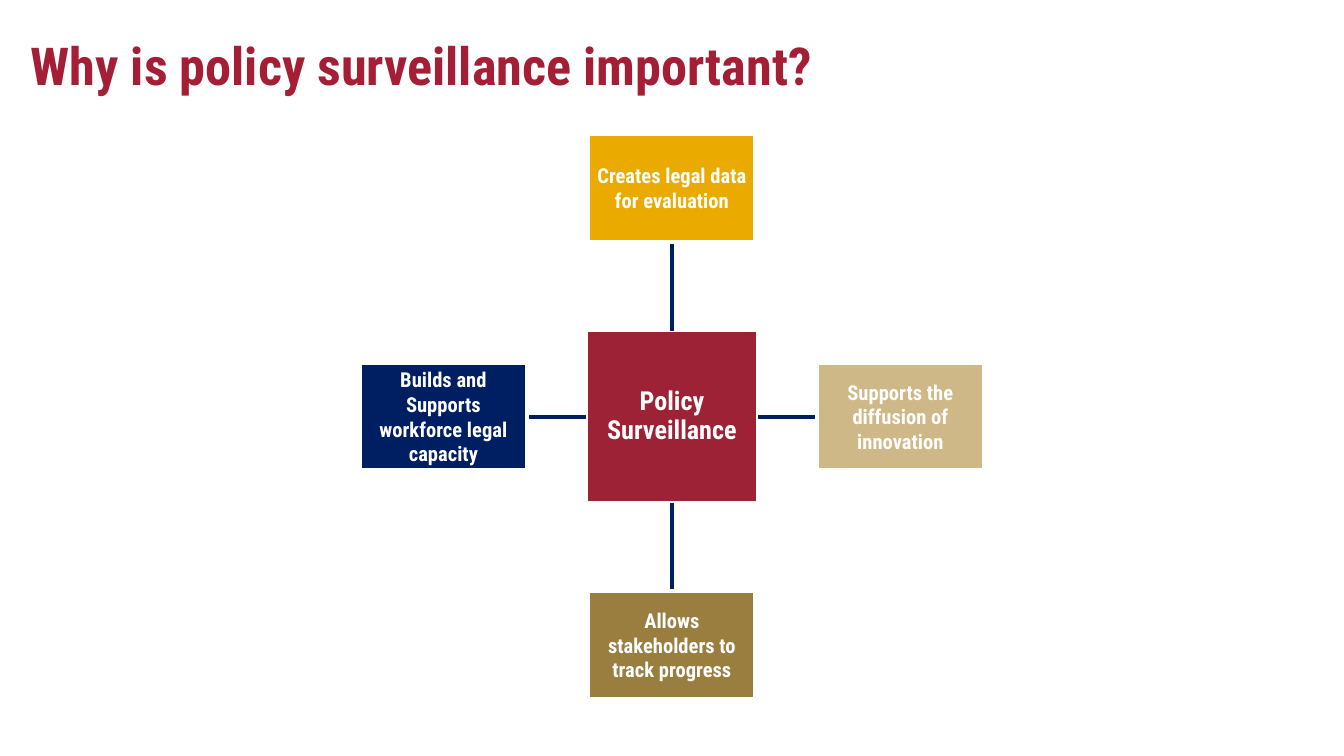
from lxml import etree
from pptx import Presentation
from pptx import util as u
from pptx.dml.color import RGBColor
from pptx.enum import shapes, text
from pptx.oxml.ns import qn

CENTER_X, CENTER_Y = 5, 3.1
HUB_SIZE = 1.28
BOX_W, BOX_H = 1.24, 0.8
REACH = 1.7  # hub centre to box centre, the same in all four directions

# Direction from the hub (x, y), fill, label
BENEFITS = [
    (0, -1, "EAAA00", "Creates legal data for evaluation"),
    (1, 0, "CEB888", "Supports the diffusion of innovation"),
    (0, 1, "9A7E40", "Allows stakeholders to track progress"),
    (-1, 0, "001E62", "Builds and Supports workforce legal capacity"),
]


def color(hex_value):
    return RGBColor.from_string(hex_value)


def write(tf, content, size, ink="FFFFFF", align=text.PP_ALIGN.CENTER,
          anchor=text.MSO_ANCHOR.MIDDLE, inset=0.03, spacing=1.0):
    tf.word_wrap = True
    tf.auto_size = text.MSO_AUTO_SIZE.NONE
    tf.vertical_anchor = anchor
    tf.margin_left = tf.margin_right = u.Inches(inset)
    tf.margin_top = tf.margin_bottom = u.Inches(inset)
    p = tf.paragraphs[0]
    p.alignment = align
    p.line_spacing = spacing
    r = p.add_run()
    r.text = content
    r.font.name = "Roboto Condensed"
    r.font.size = u.Pt(size)
    r.font.bold = True
    r.font.color.rgb = color(ink)


class Diagram:
    """Holds the current slide and the shared line style."""

    line_width = u.Pt(2)
    spoke_color = "001E62"
    border_color = "FFFFFF"

    def __init__(self, slide):
        self.s = slide

    def title(self, content):
        sp = self.s.shapes.title
        sp.left, sp.top = u.Inches(0.13), u.Inches(0.15)
        sp.width, sp.height = u.Inches(9.16), u.Inches(0.63)
        write(sp.text_frame, content, 28, ink="A41E35", inset=0.1,
              align=text.PP_ALIGN.LEFT, anchor=text.MSO_ANCHOR.TOP)

    def spoke(self, x1, y1, x2, y2):
        line = self.s.shapes.add_connector(
            shapes.MSO_CONNECTOR.STRAIGHT,
            u.Inches(x1), u.Inches(y1), u.Inches(x2), u.Inches(y2))
        line.line.color.rgb = color(self.spoke_color)
        line.line.width = self.line_width
        etree.SubElement(line._element.spPr, qn("a:effectLst"))

    def box(self, center_x, center_y, width, height, fill, label, size, **style):
        sp = self.s.shapes.add_shape(
            shapes.MSO_SHAPE.RECTANGLE,
            u.Inches(center_x - width / 2), u.Inches(center_y - height / 2),
            u.Inches(width), u.Inches(height))
        sp.shadow.inherit = False
        sp.fill.solid()
        sp.fill.fore_color.rgb = color(fill)
        sp.line.color.rgb = color(self.border_color)
        sp.line.width = self.line_width
        write(sp.text_frame, label, size, **style)


def main():
    prs = Presentation()
    prs.slide_width = u.Inches(10)
    prs.slide_height = u.Inches(10 * 9 / 16)
    diagram = Diagram(prs.slides.add_slide(prs.slide_layouts[5]))
    diagram.title("Why is policy surveillance important?")

    diagram.box(CENTER_X, CENTER_Y, HUB_SIZE, HUB_SIZE, "9D2235",
                "Policy Surveillance", 14, inset=0.04, spacing=0.9)

    hub_edge = HUB_SIZE / 2
    for dx, dy, fill, label in BENEFITS:
        box_edge = REACH - (BOX_W if dx else BOX_H) / 2
        diagram.spoke(CENTER_X + dx * hub_edge, CENTER_Y + dy * hub_edge,
                      CENTER_X + dx * box_edge, CENTER_Y + dy * box_edge)
        diagram.box(CENTER_X + dx * REACH, CENTER_Y + dy * REACH,
                    BOX_W, BOX_H, fill, label, 11)

    prs.save("out.pptx")


if __name__ == "__main__":
    main()
